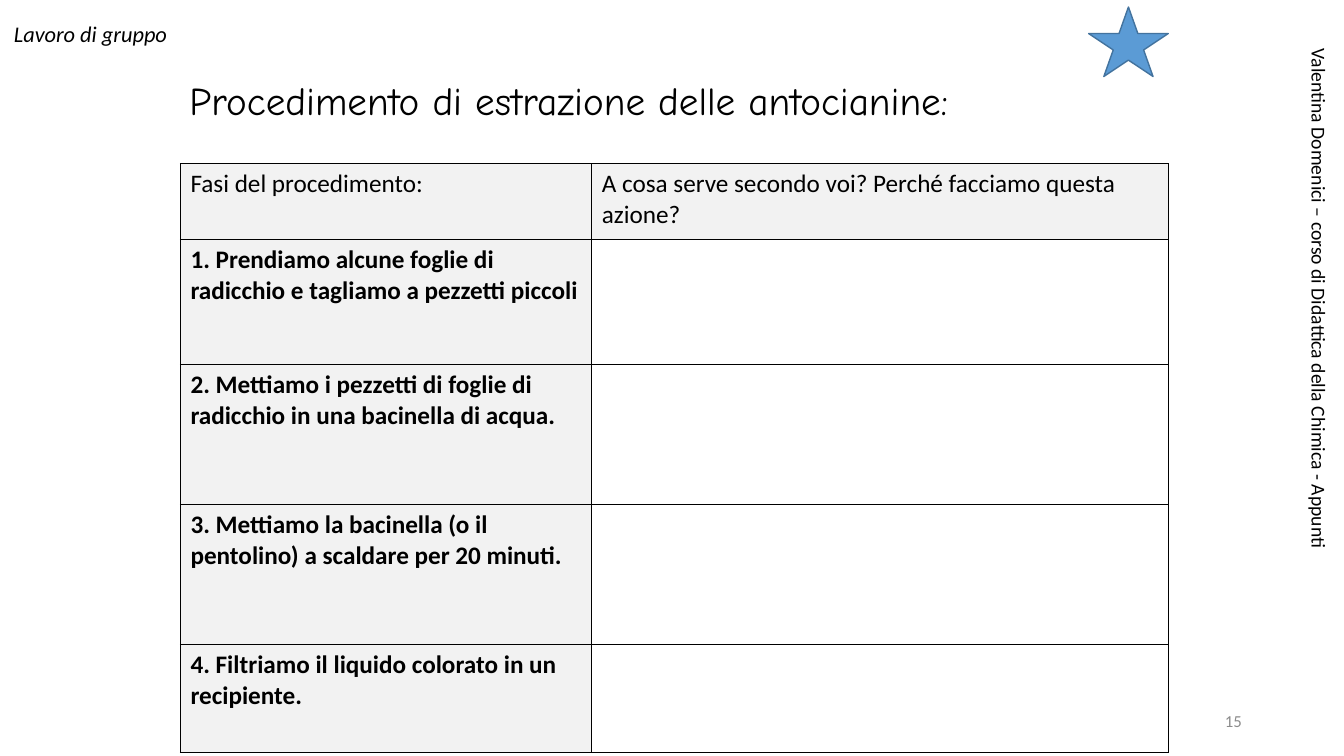
import pptx
import pptx.util
import pptx.dml.color
import pptx.enum.shapes
import pptx.enum.text
import pptx.oxml.ns
import lxml.etree

Pt = pptx.util.Pt
RGBColor = pptx.dml.color.RGBColor
ALIGN = pptx.enum.text.PP_ALIGN
ANCHOR = pptx.enum.text.MSO_ANCHOR
qn = pptx.oxml.ns.qn

BLACK = RGBColor(0x00, 0x00, 0x00)
WHITE = RGBColor(0xFF, 0xFF, 0xFF)
PALE_GRAY = RGBColor(0xF2, 0xF2, 0xF2)
NUMBER_GRAY = RGBColor(0x8C, 0x8C, 0x8C)
STAR_BLUE = RGBColor(0x5B, 0x9B, 0xD5)
STAR_EDGE = RGBColor(0x43, 0x73, 0x9E)

COLUMN_WIDTHS = [293.8, 411.8]
ROW_HEIGHTS = [54, 89.3, 100.1, 100.1, 77]
ROWS = [
    ("Fasi del procedimento:", "A cosa serve secondo voi? Perché facciamo questa azione?"),
    ("1. Prendiamo alcune foglie di radicchio e tagliamo a pezzetti piccoli", ""),
    ("2. Mettiamo i pezzetti di foglie di radicchio in una bacinella di acqua.", ""),
    ("3. Mettiamo la bacinella (o il pentolino) a scaldare per 20 minuti.", ""),
    ("4. Filtriamo il liquido colorato in un recipiente.", ""),
]


def style_font(font, size, name="Calibri", color=BLACK, bold=False, italic=False):
    font.size = Pt(size)
    font.name = name
    font.color.rgb = color
    font.bold = bold
    font.italic = italic


def add_text(page, bounds, text, size, align=ALIGN.LEFT, anchor=ANCHOR.TOP, wrap=True, **style):
    box = page.shapes.add_textbox(*map(Pt, bounds))
    frame = box.text_frame
    frame.word_wrap = wrap
    frame.vertical_anchor = anchor
    para = frame.paragraphs[0]
    para.text = text
    para.alignment = align
    style_font(para.font, size, **style)
    return box


def add_star(page, bounds):
    star = page.shapes.add_shape(
        pptx.enum.shapes.MSO_SHAPE.STAR_5_POINT, *map(Pt, bounds))
    star.shadow.inherit = False
    star.fill.solid()
    star.fill.fore_color.rgb = STAR_BLUE
    star.line.color.rgb = STAR_EDGE
    star.line.width = Pt(1)


def add_borders(cell):
    properties = cell._tc.get_or_add_tcPr()
    for side in ("lnL", "lnR", "lnT", "lnB"):
        line = lxml.etree.SubElement(properties, qn("a:" + side), w=str(Pt(1)))
        fill = lxml.etree.SubElement(line, qn("a:solidFill"))
        lxml.etree.SubElement(fill, qn("a:srgbClr"), val=str(BLACK))


def add_steps_table(page, left, top):
    bounds = (left, top, sum(COLUMN_WIDTHS), sum(ROW_HEIGHTS))
    table = page.shapes.add_table(
        len(ROWS), len(COLUMN_WIDTHS), *map(Pt, bounds)).table
    for column, width in zip(table.columns, COLUMN_WIDTHS):
        column.width = Pt(width)
    for row_index, texts in enumerate(ROWS):
        table.rows[row_index].height = Pt(ROW_HEIGHTS[row_index])
        for column_index, text in enumerate(texts):
            cell = table.cell(row_index, column_index)
            add_borders(cell)
            cell.fill.solid()
            cell.fill.fore_color.rgb = PALE_GRAY if text else WHITE
            para = cell.text_frame.paragraphs[0]
            para.text = text
            style_font(para.font, 18, bold=row_index > 0)


def main():
    deck = pptx.Presentation()
    deck.slide_width = Pt(960)
    deck.slide_height = Pt(540)
    page = deck.slides.add_slide(deck.slide_layouts[6])

    title = add_text(page, (128.2, 31.7, 720, 82.8),
                     "Procedimento di estrazione delle antocianine:", 28,
                     anchor=ANCHOR.MIDDLE, name="Comic Neue")
    title.text_frame.paragraphs[0].line_spacing = 0.9
    add_steps_table(page, 128.9, 116.9)
    add_star(page, (777.6, 5, 56.9, 49.7))
    add_text(page, (2.9, 10.8, 125.3, 26.6), "Lavoro di gruppo", 16,
             wrap=False, italic=True)
    add_text(page, (678.2, 500.4, 216, 28.8), "15", 12, align=ALIGN.RIGHT,
             anchor=ANCHOR.MIDDLE, color=NUMBER_GRAY)
    course = add_text(page, (716.4, 241.2, 451.4, 24.5),
                      "Valentina Domenici – corso di Didattica della Chimica - Appunti", 14)
    course.rotation = 90

    deck.save("out.pptx")


if __name__ == "__main__":
    main()
